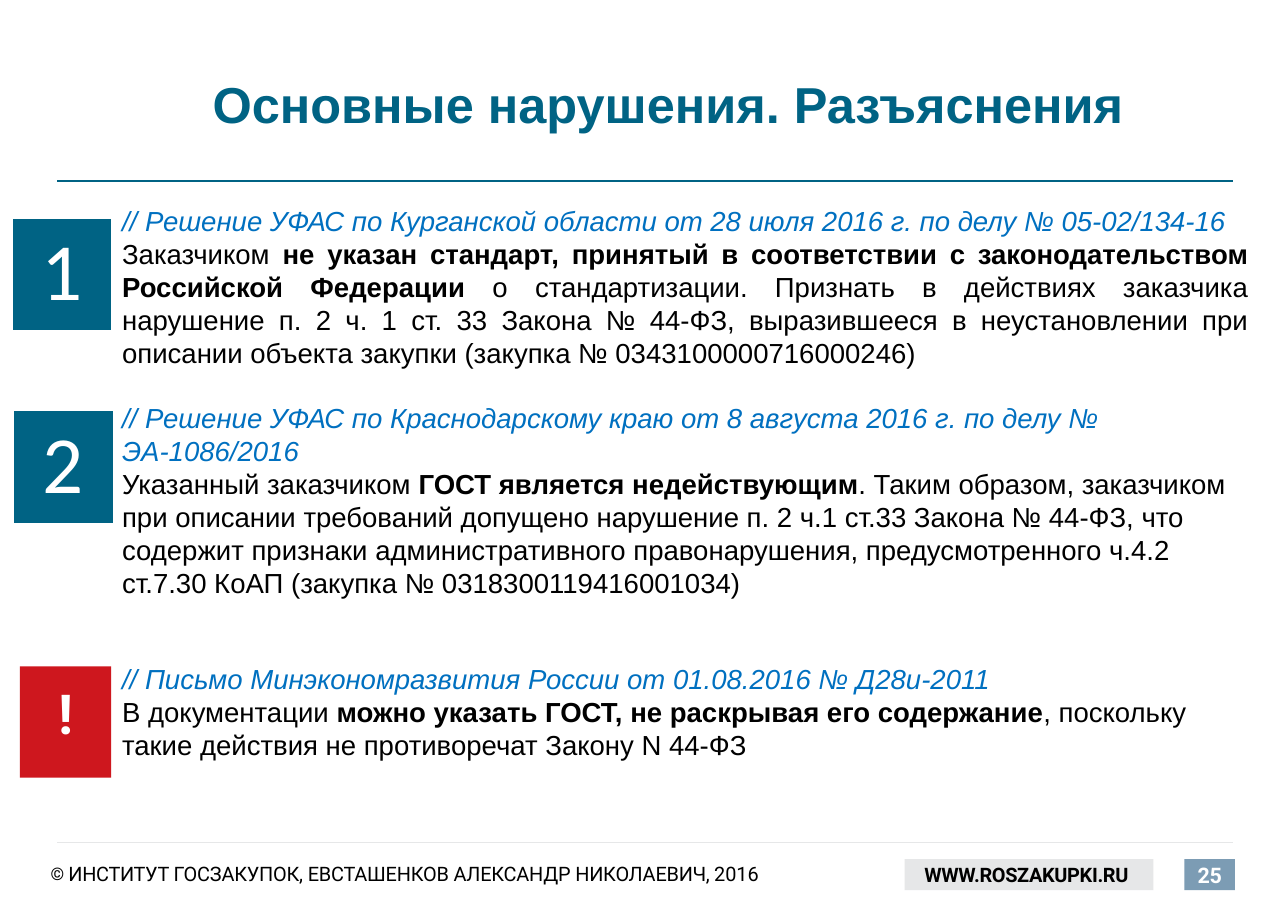
"""Build the slide on main procurement violations with two rulings and one letter."""
from pptx import Presentation
from pptx.dml.color import RGBColor
from pptx.enum.shapes import MSO_CONNECTOR, MSO_SHAPE
from pptx.enum.text import MSO_ANCHOR, PP_ALIGN
from pptx.oxml.ns import qn
from pptx.util import Inches, Pt
from lxml import etree

LEFT, CENTER, JUSTIFY = PP_ALIGN.LEFT, PP_ALIGN.CENTER, PP_ALIGN.JUSTIFY
TOP, MIDDLE = MSO_ANCHOR.TOP, MSO_ANCHOR.MIDDLE
RECTANGLE, STRAIGHT = MSO_SHAPE.RECTANGLE, MSO_CONNECTOR.STRAIGHT

TEAL = RGBColor(0x00, 0x63, 0x84)
BLUE = RGBColor(0x00, 0x70, 0xC0)
RED = RGBColor(0xCE, 0x17, 0x1E)
STEEL = RGBColor(0x7C, 0x9C, 0xB4)
GREY = RGBColor(0xE6, 0xE7, 0xE8)
WHITE = RGBColor(0xFF, 0xFF, 0xFF)
BLACK = RGBColor(0x00, 0x00, 0x00)

TITLE = "Основные нарушения. Разъяснения"
CASES = [
    (
        "// Решение УФАС по Курганской области от 28 июля 2016 г. по делу № 05-02/134-16",
        "Заказчиком ",
        "не указан стандарт, принятый в соответствии с законодательством Российской Федерации",
        " о стандартизации. Признать в действиях заказчика нарушение п. 2 ч. 1 ст. 33 Закона "
        "№ 44-ФЗ, выразившееся в неустановлении при описании объекта закупки "
        "(закупка № 0343100000716000246)",
        JUSTIFY, 0,
    ),
    (
        "// Решение УФАС по Краснодарскому краю от 8 августа 2016 г. по делу № ЭА-1086/2016",
        "Указанный заказчиком ",
        "ГОСТ является недействующим",
        ". Таким образом, заказчиком при описании требований допущено нарушение п. 2 ч.1 ст.33 "
        "Закона № 44-ФЗ, что содержит признаки административного правонарушения, "
        "предусмотренного ч.4.2 ст.7.30 КоАП (закупка № 0318300119416001034)",
        LEFT, 1,
    ),
    (
        "// Письмо Минэкономразвития России от 01.08.2016 № Д28и-2011",
        "В документации ",
        "можно указать ГОСТ, не раскрывая его содержание",
        ", поскольку такие действия не противоречат Закону N 44-ФЗ",
        LEFT, 2,
    ),
]
NUMBERS = [("1", 0.1, 1.97, 0.92), ("2", 0.11, 3.72, 0.93)]
COPYRIGHT = [
    ("© ", dict(size=19.5, baseline=4000)),
    ("ИНСТИТУТ ", dict(size=13, spacing=-20)),
    ("ГОСЗАКУПОК, ЕВСТАШЕНКОВ АЛЕКСАНДР НИКОЛАЕВИЧ, ", dict(size=13, spacing=-10)),
    ("2016", dict(size=13)),
]
RULES = [(1.64, TEAL, 1.42), (7.65, GREY, 0.85)]
RULE_LEFT, RULE_RIGHT = 0.52, 11.19
BODY_SIZE = 18
BLANK_LINE = 20.7


def add_run(paragraph, text, font="Arial", size=BODY_SIZE, color=BLACK, bold=False,
            italic=False, spacing=0, baseline=0):
    run = paragraph.add_run()
    run.text = text
    run.font.name, run.font.size = font, Pt(size)
    run.font.bold, run.font.italic = bold, italic
    run.font.color.rgb = color
    properties = run._r.get_or_add_rPr()
    if spacing:
        properties.set("spc", str(spacing))
    if baseline:
        properties.set("baseline", str(baseline))


def set_frame(shape, insets, anchor=MIDDLE, align=LEFT):
    frame = shape.text_frame
    frame.word_wrap = True
    frame.vertical_anchor = anchor
    (frame.margin_left, frame.margin_top,
     frame.margin_right, frame.margin_bottom) = map(Inches, insets)
    frame.paragraphs[0].alignment = align
    return frame


def add_box(slide, box, fill, text, insets, anchor=MIDDLE, align=CENTER, border=None, **style):
    shape = slide.shapes.add_shape(RECTANGLE, *map(Inches, box))
    shape.shadow.inherit = False
    shape.fill.solid()
    shape.fill.fore_color.rgb = fill
    if border is None:
        shape.line.fill.background()
    else:
        shape.line.color.rgb = border
        shape.line.width = Pt(2)
    paragraph = set_frame(shape, insets, anchor, align).paragraphs[0]
    add_run(paragraph, text, **style)
    return paragraph


def add_rule(slide, top, color, width):
    rule = slide.shapes.add_connector(
        STRAIGHT, Inches(RULE_LEFT), Inches(top), Inches(RULE_RIGHT), Inches(top))
    rule.line.color.rgb = color
    rule.line.width = Pt(width)
    etree.SubElement(rule._element.spPr, qn("a:effectLst"))


def add_title(slide):
    title = slide.shapes.title
    title.left, title.top, title.width, title.height = map(Inches, (1.93, 0.66, 9.29, 0.56))
    frame = set_frame(title, (0, 0, 0, 0))
    add_run(frame.paragraphs[0], TITLE, size=33, color=TEAL, bold=True)


def add_cases(slide):
    body = slide.shapes.add_textbox(*map(Inches, (1.01, 1.8, 10.42, 5.5)))
    frame = set_frame(body, (0.1, 0.05, 0.1, 0.05), TOP)
    for index, (source, opening, finding, ending, align, gap) in enumerate(CASES):
        heading = frame.add_paragraph() if index else frame.paragraphs[0]
        heading.space_before = Pt(gap * BLANK_LINE)
        add_run(heading, source, color=BLUE, italic=True)
        details = frame.add_paragraph()
        details.alignment = align
        add_run(details, opening)
        add_run(details, finding, bold=True)
        add_run(details, ending)


def add_footer(slide):
    add_box(slide, (8.21, 7.8, 2.26, 0.28), GREY, "WWW.ROSZAKUPKI.RU", (0.18, 0, 0, 0),
            align=LEFT, font="Roboto", size=13, bold=True, spacing=-20)
    add_box(slide, (10.75, 7.8, 0.46, 0.28), STEEL, "25", (0, 0, 0, 0),
            font="Roboto", size=14, color=WHITE, bold=True, spacing=-20)
    box = slide.shapes.add_textbox(*map(Inches, (0.46, 7.75, 6.82, 0.41)))
    paragraph = set_frame(box, (0, 0.1, 0, 0.1)).paragraphs[0]
    paragraph.line_spacing = Pt(14.8)
    for text, style in COPYRIGHT:
        add_run(paragraph, text, font="Roboto", **style)


def main():
    presentation = Presentation()
    presentation.slide_width, presentation.slide_height = Inches(11.69), Inches(8.27)
    slide = presentation.slides.add_slide(presentation.slide_layouts[5])
    for rule in RULES:
        add_rule(slide, *rule)
    add_footer(slide)
    add_title(slide)
    add_cases(slide)
    for number, left, top, width in NUMBERS:
        paragraph = add_box(slide, (left, top, width, 1.04), TEAL, number,
                            (0.22, 0.11, 0.22, 0.11), border=WHITE,
                            font="Calibri", size=53, color=WHITE)
        paragraph.line_spacing = 0.9
    add_box(slide, (0.18, 6.05, 0.83, 1.01), RED, "!", (0, 0.12, 0, 0), anchor=TOP,
            font="Roboto", size=36, color=WHITE, bold=True)
    presentation.save("out.pptx")


if __name__ == "__main__":
    main()
